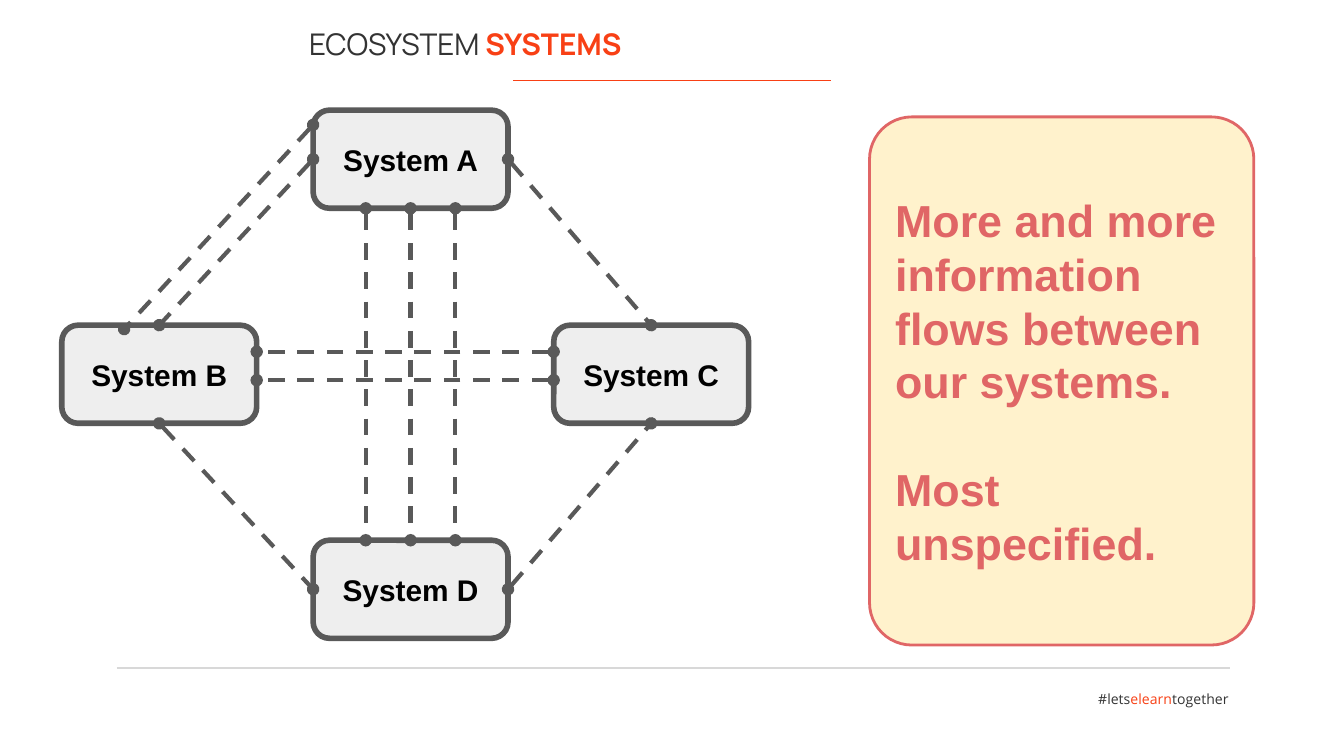
import lxml.etree
import pptx
import pptx.dml.color
import pptx.enum.dml
import pptx.enum.shapes
import pptx.enum.text
import pptx.oxml.ns
import pptx.util

rgb = pptx.dml.color.RGBColor.from_string
qn = pptx.oxml.ns.qn
align = pptx.enum.text.PP_ALIGN
anchors = pptx.enum.text.MSO_ANCHOR
rounded = pptx.enum.shapes.MSO_SHAPE.ROUNDED_RECTANGLE

theme = {
    "ink": "333333", "accent": "F84015", "rule": "D8D8D8",
    "box": "EEEEEE", "edge": "595959", "label": "000000",
    "card": "FFF2CC", "coral": "E06666",
    "title": 16, "system": 16, "message": 24, "tag": 7.5,
}

prs = pptx.Presentation()
prs.slide_width = pptx.util.Inches(10)
prs.slide_height = prs.slide_width * 9 // 16
s = prs.slides.add_slide(prs.slide_layouts[5])
u = prs.slide_width // 100


def write(sp, paragraphs, font, size, al=align.LEFT, anchor=anchors.TOP,
          inset=0.5, gap=0):
    tf = sp.text_frame
    tf.word_wrap = True
    tf.auto_size = pptx.enum.text.MSO_AUTO_SIZE.NONE
    tf.vertical_anchor = anchor
    tf.margin_left = tf.margin_right = u
    tf.margin_top = tf.margin_bottom = int(inset * u)
    for i, runs in enumerate(paragraphs):
        p = tf.add_paragraph() if i else tf.paragraphs[0]
        p.alignment = al
        p.space_before = pptx.util.Pt(gap if i else 0)
        for text, color, bold in runs:
            r = p.add_run()
            r.text = text
            r.font.name = font
            r.font.size = pptx.util.Pt(size)
            r.font.bold = bold
            r.font.color.rgb = rgb(theme[color])


def connect(x1, y1, x2, y2, color, width, flow=False):
    ends = [int(v * u) for v in (x1, y1, x2, y2)]
    line = s.shapes.add_connector(pptx.enum.shapes.MSO_CONNECTOR.STRAIGHT, *ends)
    line.line.color.rgb = rgb(theme[color])
    line.line.width = pptx.util.Pt(width)
    sppr = line._element.spPr
    if flow:
        line.line.dash_style = pptx.enum.dml.MSO_LINE.DASH
        for end in ("a:headEnd", "a:tailEnd"):
            lxml.etree.SubElement(sppr.find(qn("a:ln")), qn(end), type="oval")
    lxml.etree.SubElement(sppr, qn("a:effectLst"))


connect(8.7, 49.7, 91.5, 49.7, "rule", 1)
tag = s.shapes.add_textbox(*[int(v * u) for v in (76.2, 50.9, 16.2, 2.3)])
write(tag, [[("#lets", "ink", False), ("elearn", "accent", False),
             ("together", "ink", False)]],
      "Open Sans", theme["tag"], al=align.RIGHT)

title = s.shapes.title
title.left, title.top, title.width, title.height = [
    int(v * u) for v in (22, 1.4, 59, 4.1)]
write(title, [[("ECOSYSTEM ", "ink", False), ("SYSTEMS", "accent", True)]],
      "Manrope", theme["title"])
connect(38.2, 6, 61.8, 6, "accent", 0.75)

box_w, box_h = 14.5, 7.3
left, middle, right = 4.6, 23.3, 41.2
top, pitch = 8.2, 16
systems = {
    "A": (middle, top),
    "B": (left, top + pitch),
    "C": (right, top + pitch),
    "D": (middle, top + 2 * pitch),
}
panels = [(x, y, box_w, box_h, 0.167, "box", "edge", 3)
          for x, y in systems.values()]
panels.append((64.7, 8.7, 28.6, 39.3, 0.11, "card", "coral", 1.5))
shapes = []
for x, y, w, h, corner, fill, edge, width in panels:
    sp = s.shapes.add_shape(rounded, *[int(v * u) for v in (x, y, w, h)])
    sp.adjustments[0] = corner
    sp.shadow.inherit = False
    sp.fill.solid()
    sp.fill.fore_color.rgb = rgb(theme[fill])
    sp.line.color.rgb = rgb(theme[edge])
    sp.line.width = pptx.util.Pt(width)
    shapes.append(sp)

*boxes, card = shapes
for name, sp in zip(systems, boxes):
    write(sp, [[(f"System {name}", "label", True)]], "Arial", theme["system"],
          al=align.CENTER, anchor=anchors.MIDDLE, inset=1)
write(card, [[("More and more information flows between our systems.", "coral", True)],
             [("Most unspecified.", "coral", True)]],
      "Arial", theme["message"], anchor=anchors.MIDDLE, inset=1, gap=28.8)

flows = [
    ("A", 0, 0.5, "B", 0.5, 0),
    ("A", 1, 0.5, "C", 0.5, 0),
    ("D", 1, 0.5, "C", 0.5, 1),
    ("B", 0.5, 1, "D", 0, 0.5),
    ("A", 0, 0.15, "B", 0.32, 0.04),
]
flows += [("A", fx, 1, "D", fx, 0) for fx in (0.27, 0.5, 0.73)]
flows += [("C", 0, fy, "B", 1, fy) for fy in (0.27, 0.56)]
for start, fx1, fy1, end, fx2, fy2 in flows:
    (x1, y1), (x2, y2) = systems[start], systems[end]
    connect(x1 + fx1 * box_w, y1 + fy1 * box_h,
            x2 + fx2 * box_w, y2 + fy2 * box_h, "edge", 2.25, flow=True)

prs.save("out.pptx")
